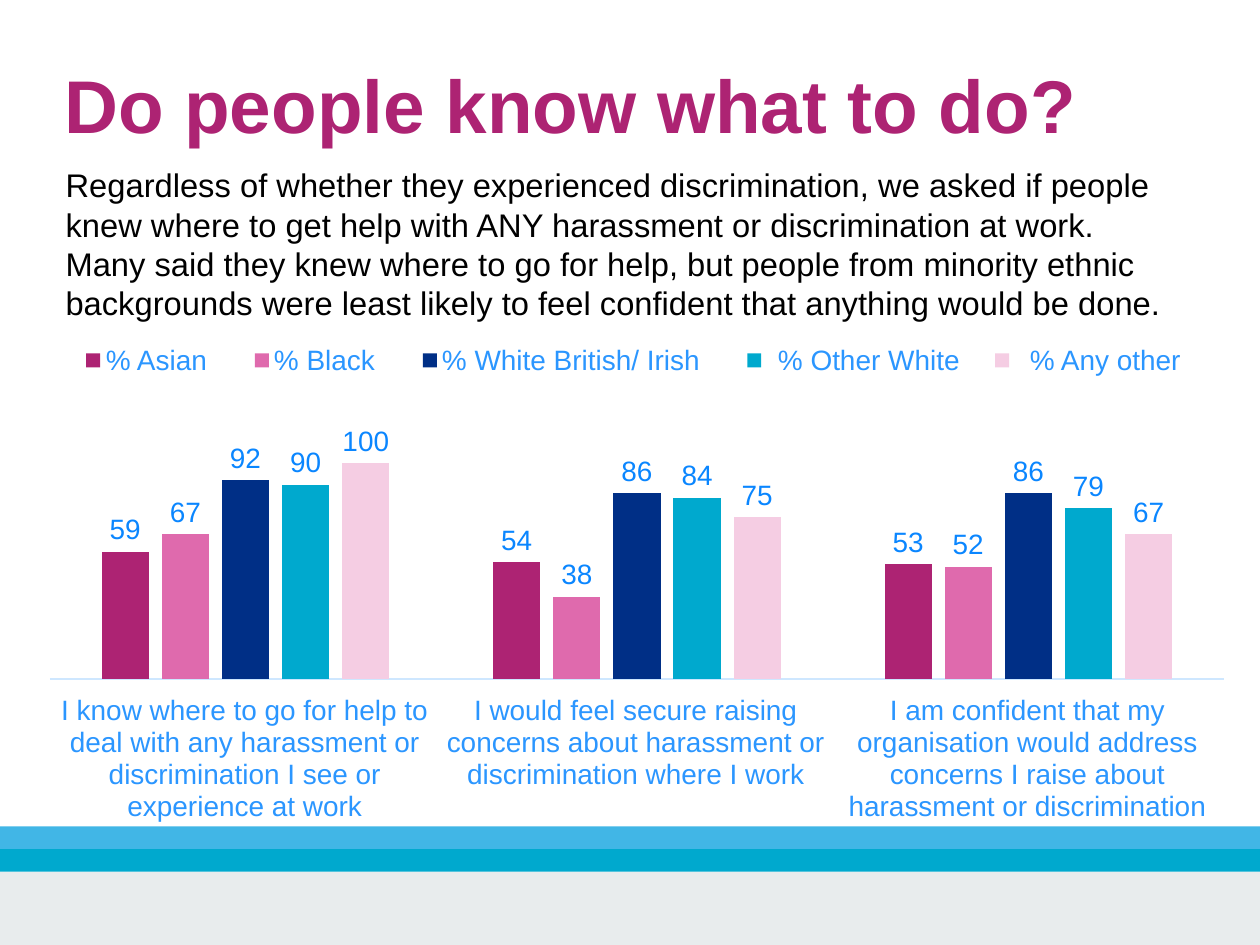
"""Builds the slide on knowing where to get help with harassment."""
from pptx import Presentation
from pptx.chart.data import CategoryChartData
from pptx.dml.color import RGBColor
from pptx.enum import chart as ch, shapes, text
from pptx.oxml import parse_xml
from pptx.oxml.ns import nsdecls
from pptx.util import Pt

HUES = {"plum": "AD2373", "pink": "DF6AAD", "navy": "002F86", "teal": "00A9CE",
        "pale": "F5CDE3", "sky": "41B6E6", "grey": "E8ECED", "axis": "CEE7FF",
        "label": "0A86FF", "note": "2B96FF", "black": "000000"}
GROUPS = [("% Asian", "plum", (59, 54, 53), 37),
          ("% Black", "pink", (67, 38, 52), 109.3),
          ("% White British/ Irish", "navy", (92, 86, 86), 181.3),
          ("% Other White", "teal", (90, 84, 79), 320.3),
          ("% Any other", "pale", (100, 75, 67), 426.5)]
CLAIMS = [("I know where to go for help to deal with any harassment or "
           "discrimination I see or experience at work", 25.2, 159.5),
          ("I would feel secure raising concerns about harassment or "
           "discrimination where I work", 190.8, 163.5),
          ("I am confident that my organisation would address concerns I raise "
           "about harassment or discrimination", 362.9, 155)]
INTRO = ("Regardless of whether they experienced discrimination, we asked if people "
         "knew where to get help with ANY harassment or discrimination at work. "
         "Many said they knew where to go for help, but people from minority ethnic "
         "backgrounds were least likely to feel confident that anything would be done.")

prs = Presentation()
prs.slide_width, prs.slide_height = Pt(540), Pt(405)
slide = prs.slides.add_slide(prs.slide_layouts[5])


def block(x, y, w, h, hue):
    box = slide.shapes.add_shape(shapes.MSO_SHAPE.RECTANGLE, Pt(x), Pt(y), Pt(w), Pt(h))
    box.shadow.inherit = False
    box.fill.solid()
    box.fill.fore_color.rgb = RGBColor.from_string(HUES[hue])
    box.line.fill.background()


def style(font, size, hue):
    font.name, font.size = "Arial", Pt(size)
    font.color.rgb = RGBColor.from_string(HUES[hue])


for y, h, hue in [(373.6, 31.4, "grey"), (354.2, 9.7, "sky"), (363.9, 9.7, "teal")]:
    block(0, y, 540, h, hue)

title = slide.shapes.title
title.left, title.top, title.width, title.height = Pt(27.5), Pt(24), Pt(450), Pt(40.5)
frame = title.text_frame
frame.margin_left = frame.margin_right = frame.margin_top = frame.margin_bottom = 0
frame.vertical_anchor = text.MSO_ANCHOR.MIDDLE
frame.text = "Do people know what to do?"
para = frame.paragraphs[0]
para.alignment = text.PP_ALIGN.LEFT
style(para.font, 32, "plum")
para.font.bold = True

data = CategoryChartData()
data.categories = [claim for claim, x, w in CLAIMS]
for name, hue, vals, x in GROUPS:
    data.add_series(name, vals)
chart = slide.shapes.add_chart(ch.XL_CHART_TYPE.COLUMN_CLUSTERED, Pt(21), Pt(170),
                               Pt(504), Pt(126), data).chart
chart.has_legend = chart.has_title = False
style(chart.font, 12, "label")
plot = chart.plots[0]
plot.vary_by_categories = False
plot.gap_width, plot.overlap = 219, -27
plot.has_data_labels = True
plot.data_labels.show_value = True
plot.data_labels.position = ch.XL_LABEL_POSITION.OUTSIDE_END
style(plot.data_labels.font, 12, "label")
for bars, (name, hue, vals, x) in zip(plot.series, GROUPS):
    bars.format.fill.solid()
    bars.format.fill.fore_color.rgb = RGBColor.from_string(HUES[hue])
scale, base = chart.value_axis, chart.category_axis
scale.minimum_scale, scale.maximum_scale = 0, 120
scale.has_major_gridlines = scale.visible = False
base.tick_label_position = ch.XL_TICK_LABEL_POSITION.NONE
base.major_tick_mark = ch.XL_TICK_MARK.NONE
base.format.line.color.rgb = RGBColor.from_string(HUES["axis"])
base.format.line.width = Pt(0.75)
area = chart._chartSpace.chart.plotArea
for old in area.xpath("c:layout"):
    area.remove(old)
area.insert(0, parse_xml(
    f'<c:layout {nsdecls("c")}><c:manualLayout><c:layoutTarget val="inner"/>'
    '<c:xMode val="edge"/><c:yMode val="edge"/><c:x val="0"/><c:y val="0.08"/>'
    '<c:w val="1"/><c:h val="0.88"/></c:manualLayout></c:layout>'))

notes = [(claim, x, 296.6, w, 57.5) for claim, x, w in CLAIMS]
for words, x, y, w, h in notes + [(INTRO, 28.1, 69.8, 478.8, 92.2)]:
    frame = slide.shapes.add_textbox(Pt(x), Pt(y), Pt(w), Pt(h)).text_frame
    frame.word_wrap = True
    frame.margin_left = frame.margin_right = frame.margin_bottom = 0
    frame.margin_top = Pt(1)
    frame.text = words
    para = frame.paragraphs[0]
    para.space_before = Pt(1.5)
    if words == INTRO:
        style(para.font, 14, "black")
    else:
        style(para.font, 12, "note")
        para.alignment = text.PP_ALIGN.CENTER
        para.line_spacing = 0.96

key = frame.add_paragraph()
key.text = "\t".join(name for name, hue, vals, x in GROUPS)
key.space_before = Pt(8.6)
style(key.font, 12, "note")
props = key._p.get_or_add_pPr()
props.set("marL", str(Pt(17.3)))
props.set("indent", "0")
stops = "".join(f'<a:tab pos="{Pt(x)}" algn="l"/>' for x in (90, 161.3, 301, 406.8))
props.insert_element_before(parse_xml(f'<a:tabLst {nsdecls("a")}>{stops}</a:tabLst>'),
                            "a:defRPr", "a:extLst")
for name, hue, vals, x in GROUPS:
    block(x, 151.5, 6, 6, hue)

prs.save("out.pptx")
